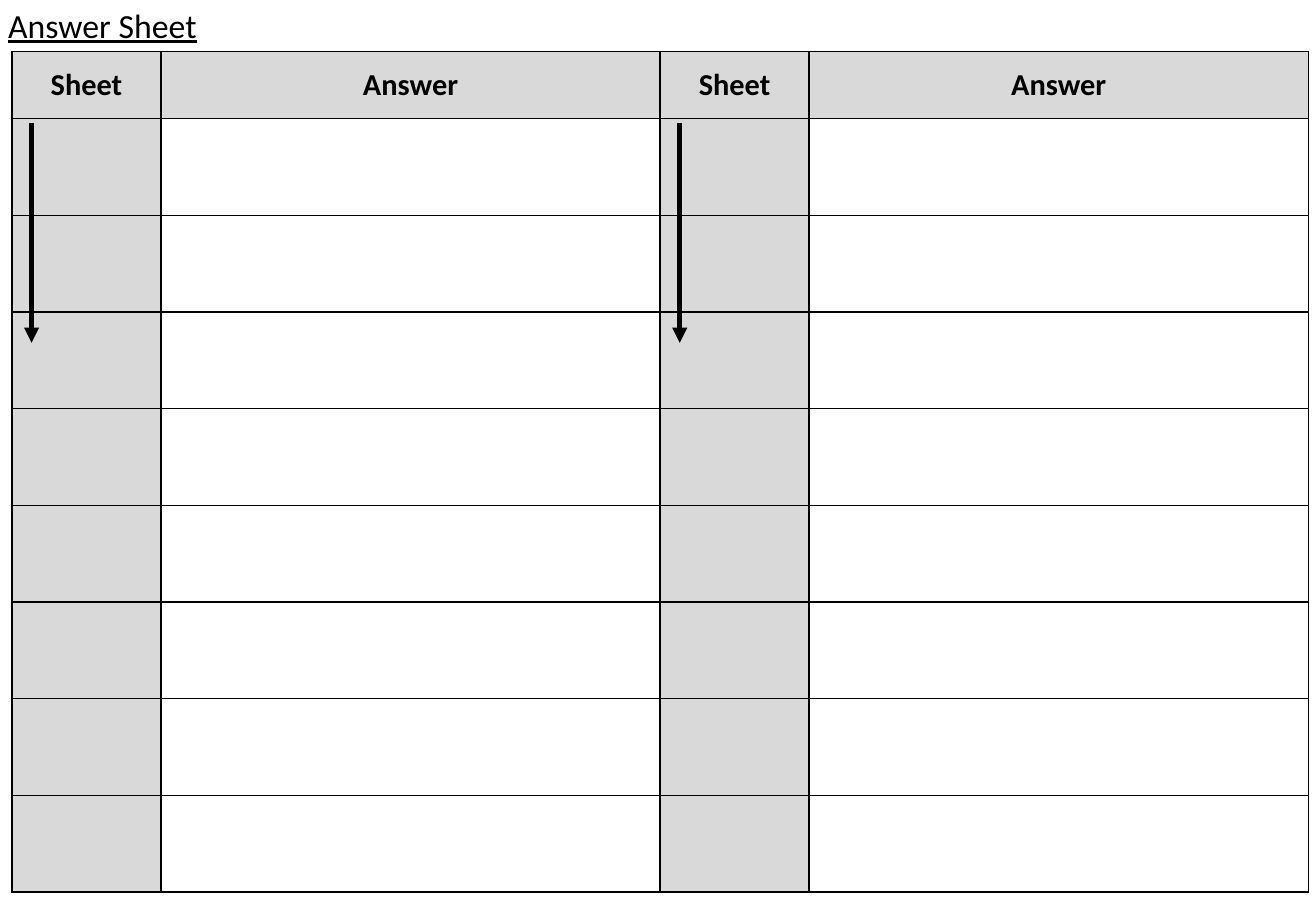
from dataclasses import dataclass

from lxml import etree
from pptx import Presentation
from pptx.dml.color import RGBColor
from pptx.enum.shapes import MSO_CONNECTOR
from pptx.enum.text import MSO_ANCHOR, PP_ALIGN
from pptx.oxml.ns import qn
from pptx.util import Cm, Pt

STRAIGHT = MSO_CONNECTOR.STRAIGHT
MIDDLE = MSO_ANCHOR.MIDDLE
LEFT, CENTER = PP_ALIGN.LEFT, PP_ALIGN.CENTER


@dataclass(frozen=True)
class Theme:
    font: str = "Calibri"
    ink: RGBColor = RGBColor(0, 0, 0)
    shade: RGBColor = RGBColor(0xD9, 0xD9, 0xD9)
    paper: RGBColor = RGBColor(0xFF, 0xFF, 0xFF)
    title_size: Pt = Pt(20)
    header_size: Pt = Pt(18)
    border: Pt = Pt(1)
    arrow: Pt = Pt(3)


THEME = Theme()
HEADINGS = ("Sheet", "Answer") * 2
ANSWER_ROWS = 8
HEADER_HEIGHT = Cm(1.4)
SHEET_SHARE = 0.23
ARROW_INSET, ARROW_GAP, ARROW_LENGTH = Cm(0.41), Cm(0.09), Cm(4.6)


def style_text(paragraph, size, align):
    paragraph.alignment = align
    font = paragraph.runs[0].font
    font.name, font.size, font.color.rgb = THEME.font, size, THEME.ink
    return font


def add_title(slide, left, top, width, height):
    title = slide.shapes.title
    title.left, title.top, title.width, title.height = left, top, width, height
    frame = title.text_frame
    frame.margin_left = Cm(0.17)
    frame.margin_right = frame.margin_top = frame.margin_bottom = 0
    frame.vertical_anchor = MIDDLE
    frame.text = "Answer Sheet"
    style_text(frame.paragraphs[0], THEME.title_size, LEFT).underline = True


def add_borders(cell):
    properties = cell._tc.get_or_add_tcPr()
    for side in ("a:lnL", "a:lnR", "a:lnT", "a:lnB"):
        line = etree.SubElement(properties, qn(side), w=str(THEME.border))
        fill = etree.SubElement(line, qn("a:solidFill"))
        etree.SubElement(fill, qn("a:srgbClr"), val=str(THEME.ink))


def add_arrow(slide, x, top, length):
    arrow = slide.shapes.add_connector(STRAIGHT, x, top, x, top + length)
    arrow.line.color.rgb = THEME.ink
    arrow.line.width = THEME.arrow
    etree.SubElement(arrow.line._get_or_add_ln(), qn("a:tailEnd"), type="triangle")
    etree.SubElement(arrow._element.spPr, qn("a:effectLst"))


def add_answer_grid(slide, left, top, width, height):
    grid = slide.shapes.add_table(
        ANSWER_ROWS + 1, len(HEADINGS), left, top, width, height
    ).table
    pair_width = width // 2
    sheet_width = int(pair_width * SHEET_SHARE)
    for index, column in enumerate(grid.columns):
        column.width = pair_width - sheet_width if index % 2 else sheet_width
    for index, row in enumerate(grid.rows):
        row.height = (height - HEADER_HEIGHT) // ANSWER_ROWS if index else HEADER_HEIGHT
        for position, cell in enumerate(row.cells):
            add_borders(cell)
            is_answer = index > 0 and position % 2 == 1
            cell.fill.solid()
            cell.fill.fore_color.rgb = THEME.paper if is_answer else THEME.shade
    for cell, heading in zip(grid.rows[0].cells, HEADINGS):
        cell.vertical_anchor = MIDDLE
        cell.text = heading
        paragraph = cell.text_frame.paragraphs[0]
        style_text(paragraph, THEME.header_size, CENTER).bold = True
    for pair_left in (left, left + pair_width):
        add_arrow(slide, pair_left + ARROW_INSET,
                  top + HEADER_HEIGHT + ARROW_GAP, ARROW_LENGTH)


def main():
    deck = Presentation()
    deck.slide_width, deck.slide_height = Cm(27.51), Cm(19.05)
    slide = deck.slides.add_slide(deck.slide_layouts[5])
    add_title(slide, Cm(0), Cm(0), Cm(4.42), Cm(1.04))
    add_answer_grid(slide, Cm(0.25), Cm(1.08), Cm(27.1), Cm(17.58))
    deck.save("out.pptx")


if __name__ == "__main__":
    main()
